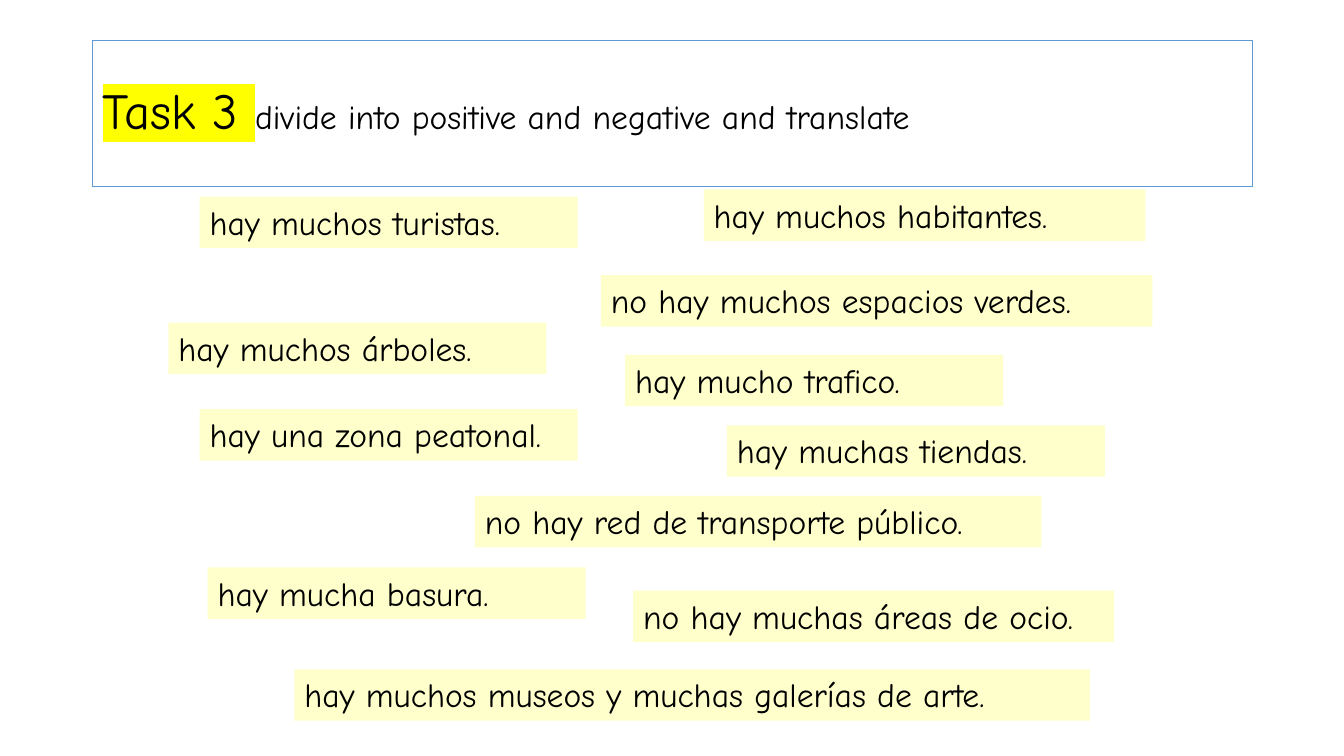
from lxml.etree import SubElement
from pptx import Presentation
from pptx.dml.color import RGBColor
from pptx.enum.text import MSO_ANCHOR as Anchor, MSO_AUTO_SIZE as AutoSize, PP_ALIGN as Align
from pptx.oxml.ns import qn
from pptx.util import Inches, Pt

FONT = "Comic Neue"
TITLE_BOX = (0.92, 0.4, 11.5, 1.45)
TITLE_RUNS = [
    ("Task 3 ", 36, "FFFF00"),
    ("divide into positive and negative and translate", 24, None),
]
CARD_WIDTH, CARD_HEIGHT = 3.75, 0.51
CARDS = [
    ("hay muchos turistas.", 1.98, 1.95, CARD_WIDTH),
    ("hay mucho trafico.", 6.2, 3.52, CARD_WIDTH),
    ("hay mucha basura.", 2.06, 5.63, CARD_WIDTH),
    ("hay muchos habitantes.", 6.98, 1.88, 4.38),
    ("hay muchas tiendas.", 7.21, 4.22, CARD_WIDTH),
    ("hay una zona peatonal.", 1.98, 4.06, CARD_WIDTH),
    ("hay muchos museos y muchas galerías de arte.", 2.92, 6.64, 7.89),
    ("hay muchos árboles.", 1.67, 3.2, CARD_WIDTH),
    ("no hay muchos espacios verdes.", 5.96, 2.73, 5.47),
    ("no hay red de transporte público.", 4.71, 4.92, 5.62),
    ("no hay muchas áreas de ocio.", 6.28, 5.86, 4.77),
]


def color(hex_text):
    return RGBColor.from_string(hex_text)


def fill_shape(shape, hex_text):
    shape.fill.solid()
    shape.fill.fore_color.rgb = color(hex_text)


def style_paragraph(paragraph):
    paragraph.alignment = Align.LEFT
    paragraph.font.name = FONT
    paragraph.font.size = Pt(24)
    paragraph.font.color.rgb = color("000000")


def highlight_run(run, hex_text):
    highlight = SubElement(run.font._element, qn("a:highlight"))
    SubElement(highlight, qn("a:srgbClr"), val=hex_text)


def add_title(slide):
    title = slide.shapes.title
    title.left, title.top, title.width, title.height = map(Inches, TITLE_BOX)
    fill_shape(title, "FFFFFF")
    title.line.color.rgb = color("5B9BD5")
    title.line.width = Pt(0.75)
    title.text_frame.vertical_anchor = Anchor.MIDDLE
    paragraph = title.text_frame.paragraphs[0]
    style_paragraph(paragraph)
    paragraph.line_spacing = 0.9
    for text, size, marker in TITLE_RUNS:
        run = paragraph.add_run()
        run.text = text
        run.font.size = Pt(size)
        if marker:
            highlight_run(run, marker)


def add_card(slide, text, left, top, width):
    card = slide.shapes.add_textbox(*map(Inches, (left, top, width, CARD_HEIGHT)))
    fill_shape(card, "FFFFCC")
    frame = card.text_frame
    frame.word_wrap = True
    frame.auto_size = AutoSize.SHAPE_TO_FIT_TEXT
    frame.text = text
    style_paragraph(frame.paragraphs[0])


def main():
    presentation = Presentation()
    presentation.slide_width = Inches(13.33)
    presentation.slide_height = Inches(7.5)
    slide = presentation.slides.add_slide(presentation.slide_layouts[5])
    add_title(slide)
    for card in CARDS:
        add_card(slide, *card)
    presentation.save("out.pptx")


if __name__ == "__main__":
    main()
